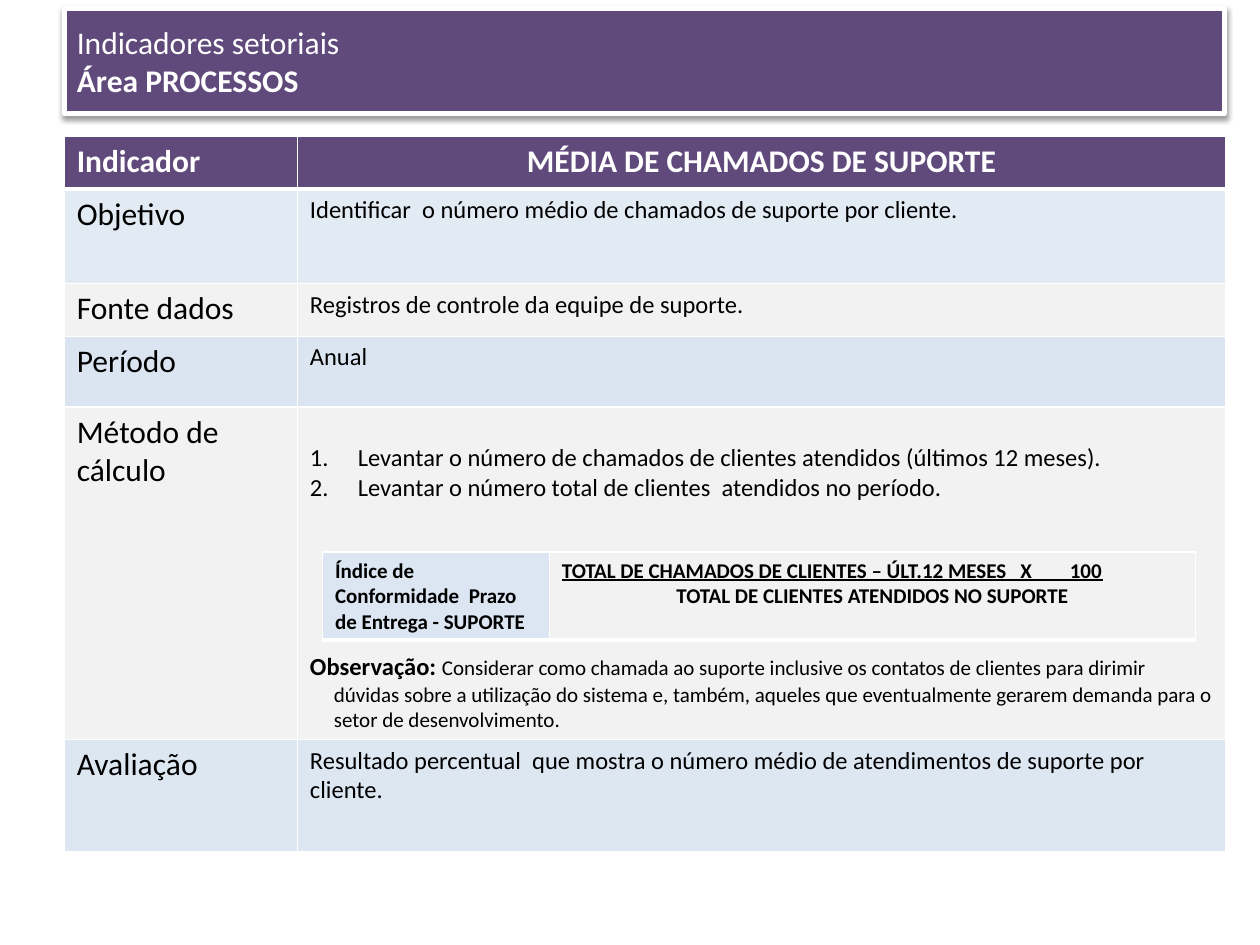
from dataclasses import dataclass
from typing import Optional

from lxml.etree import SubElement
from pptx import Presentation
from pptx.dml.color import RGBColor
from pptx.enum.text import MSO_ANCHOR as Anchor, MSO_AUTO_SIZE as AutoSize, PP_ALIGN as Align
from pptx.oxml.ns import qn
from pptx.util import Inches, Pt

FONT = "Calibri"
PURPLE = RGBColor(0x60, 0x4A, 0x7B)
BLUE = RGBColor(0xB9, 0xCD, 0xE5)
PALE_BLUE = RGBColor(0xDC, 0xE6, 0xF2)
GREY = RGBColor(0xF2, 0xF2, 0xF2)
WHITE = RGBColor(0xFF, 0xFF, 0xFF)
BLACK = RGBColor(0, 0, 0)

LEFT, WIDTH = 0.51, 9.21
LINE_14 = 17.1  # height of a 14 pt line, in points


@dataclass
class IndicatorRow:
    label: str
    detail: str
    height: float
    fill: RGBColor
    opacity: Optional[int] = None


ROWS = [
    IndicatorRow("Objetivo", "Identificar  o número médio de chamados de suporte por cliente.",
                 0.75, BLUE, 41),
    IndicatorRow("Fonte dados", "Registros de controle da equipe de suporte.", 0.42, GREY),
    IndicatorRow("Período", "Anual", 0.56, BLUE, 51),
    IndicatorRow("Método de cálculo", "", 2.64, GREY),
    IndicatorRow("Avaliação", "Resultado percentual  que mostra o número médio de atendimentos "
                 "de suporte por cliente.", 0.89, BLUE, 48),
]
STEPS = [
    "Levantar o número de chamados de clientes atendidos (últimos 12 meses).",
    "Levantar o número total de clientes  atendidos no período.",
]
NOTE = ("Considerar como chamada ao suporte inclusive os contatos de clientes para dirimir "
        "dúvidas sobre a utilização do sistema e, também, aqueles que eventualmente gerarem "
        "demanda para o setor de desenvolvimento.")


def write(paragraph, text: str, size: float = 14, color: RGBColor = BLACK, bold: bool = False,
          underline: bool = False, align=Align.LEFT) -> None:
    paragraph.alignment = align
    run = paragraph.add_run()
    run.text = text
    font = run.font
    font.name, font.size, font.bold, font.underline = FONT, Pt(size), bold, underline
    font.color.rgb = color


def indent(paragraph, hang: float, numbered: bool = False) -> None:
    """Hang the first line by the given inches, with an automatic number if wanted."""
    properties = paragraph._p.get_or_add_pPr()
    properties.set("marL", str(Inches(hang)))
    properties.set("indent", str(-Inches(hang)))
    if numbered:
        SubElement(properties, qn("a:buFont"), typeface="+mj-lt")
        SubElement(properties, qn("a:buAutoNum"), type="arabicPeriod")


def add_color(parent, color: RGBColor, opacity: int):
    node = SubElement(parent, qn("a:srgbClr"), val=str(color))
    SubElement(node, qn("a:alpha"), val=str(opacity * 1000))


def style_cell(cell, fill: Optional[RGBColor], opacity: Optional[int] = None,
               bottom: float = 1, top: float = 1) -> None:
    """Draw white borders, then fill the cell."""
    properties = cell._tc.get_or_add_tcPr()
    for side, width in {"L": 1, "R": 1, "T": top, "B": bottom}.items():
        border = SubElement(properties, qn(f"a:ln{side}"), w=str(Pt(width)))
        SubElement(SubElement(border, qn("a:solidFill")), qn("a:srgbClr"), val=str(WHITE))
    if fill is None:
        cell.fill.background()
        return
    cell.fill.solid()
    cell.fill.fore_color.rgb = fill
    if opacity is not None:
        solid = properties.find(qn("a:solidFill"))
        solid.clear()
        add_color(solid, fill, opacity)


def add_grid(slide, left: float, top: float, columns: list[float], heights: list[float]):
    table = slide.shapes.add_table(len(heights), len(columns), Inches(left), Inches(top),
                                   Inches(sum(columns)), Inches(sum(heights))).table
    table.horz_banding = False
    for column, width in zip(table.columns, columns):
        column.width = Inches(width)
    for row, height in zip(table.rows, heights):
        row.height = Inches(height)
    return table


def add_heading(slide) -> None:
    heading = slide.shapes.title
    heading.left, heading.top = Inches(LEFT), Inches(0.13)
    heading.width, heading.height = Inches(WIDTH), Inches(0.71)
    heading.fill.solid()
    heading.fill.fore_color.rgb = PURPLE
    heading.line.color.rgb = WHITE
    heading.line.width = Pt(3)
    effects = SubElement(heading._element.spPr, qn("a:effectLst"))
    shadow = SubElement(effects, qn("a:outerShdw"), blurRad=str(Pt(3.1)), dist=str(Pt(1.6)),
                        dir="5400000", rotWithShape="0")
    add_color(shadow, BLACK, 38)
    frame = heading.text_frame
    frame.word_wrap = True
    frame.auto_size = AutoSize.SHAPE_TO_FIT_TEXT
    frame.vertical_anchor = Anchor.MIDDLE
    write(frame.paragraphs[0], "Indicadores setoriais", size=18, color=WHITE)
    write(frame.add_paragraph(), "Área PROCESSOS", size=18, color=WHITE, bold=True)


def write_method(cell) -> None:
    cell.margin_top = Inches(0.05) + Pt(LINE_14)
    frame = cell.text_frame
    for number, step in enumerate(STEPS):
        paragraph = frame.add_paragraph() if number else frame.paragraphs[0]
        indent(paragraph, 0.38, numbered=True)
        write(paragraph, step)
    note = frame.add_paragraph()
    indent(note, 0.19)
    note.space_before = Pt(5 * LINE_14)  # room for the formula
    write(note, "Observação: ", bold=True)
    write(note, NOTE, size=12)


def add_indicator(slide) -> None:
    table = add_grid(slide, LEFT, 1.08, [1.85, 7.37], [0.42] + [row.height for row in ROWS])
    headers = [("Indicador", Align.LEFT), ("MÉDIA DE CHAMADOS DE SUPORTE", Align.CENTER)]
    for column, (text, align) in enumerate(headers):
        cell = table.cell(0, column)
        style_cell(cell, PURPLE, bottom=3)
        write(cell.text_frame.paragraphs[0], text, size=18, color=WHITE, bold=True, align=align)
    for number, row in enumerate(ROWS, start=1):
        label, detail = table.cell(number, 0), table.cell(number, 1)
        for cell in (label, detail):
            style_cell(cell, row.fill, row.opacity, top=3 if number == 1 else 1)
        write(label.text_frame.paragraphs[0], row.label, size=18)
        if row.detail:
            write(detail.text_frame.paragraphs[0], row.detail)
        else:
            write_method(detail)


def add_formula(slide) -> None:
    table = add_grid(slide, 2.56, 4.38, [1.8, 5.13], [0.7])
    name, ratio = table.cell(0, 0), table.cell(0, 1)
    style_cell(name, PALE_BLUE, bottom=3)
    style_cell(ratio, None, bottom=3)
    write(name.text_frame.paragraphs[0], "Índice de  Conformidade  Prazo de Entrega - SUPORTE",
          size=12, bold=True)
    write(ratio.text_frame.paragraphs[0],
          "TOTAL DE CHAMADOS DE CLIENTES – ÚLT.12 MESES   X        100",
          size=12, bold=True, underline=True)
    write(ratio.text_frame.add_paragraph(), "TOTAL DE CLIENTES ATENDIDOS NO SUPORTE",
          size=12, bold=True, align=Align.CENTER)


def main() -> None:
    deck = Presentation()
    deck.slide_width, deck.slide_height = Inches(10), Inches(7.5)
    slide = deck.slides.add_slide(deck.slide_layouts[5])
    add_heading(slide)
    add_indicator(slide)
    add_formula(slide)
    deck.save("out.pptx")


if __name__ == "__main__":
    main()
